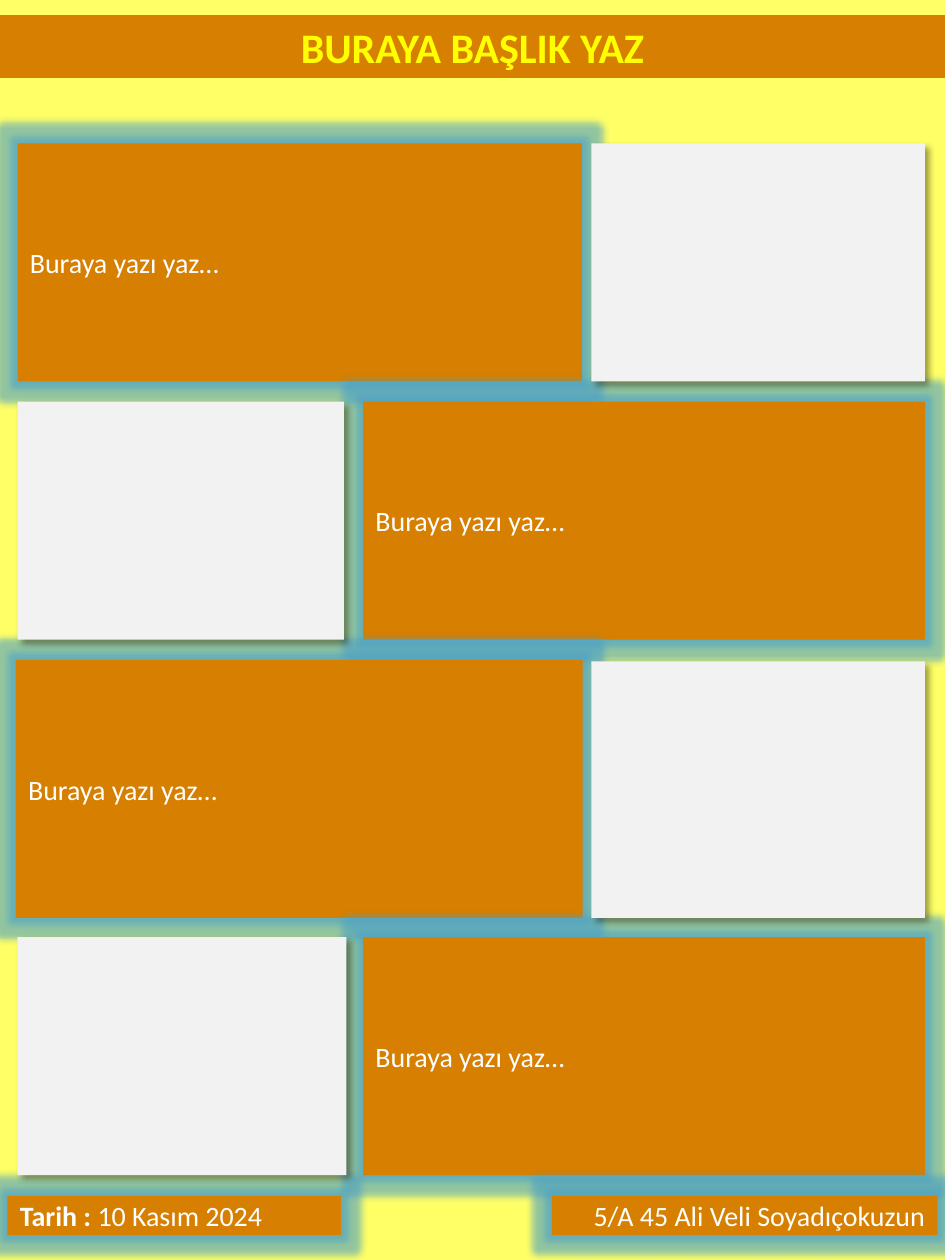
"""Build a one-page class poster with alternating text and picture areas."""
from dataclasses import dataclass

import pptx
import pptx.dml.color
import pptx.enum.shapes
import pptx.enum.text
import pptx.oxml
import pptx.oxml.ns
import pptx.util

Pt = pptx.util.Pt
ALIGN = pptx.enum.text.PP_ALIGN
ANCHOR = pptx.enum.text.MSO_ANCHOR

ORANGE = "D67F00"
PALE_GREY = "F2F2F2"
WHITE = "FFFFFF"
YELLOW = "FFFF00"
GLOW = (
    '<a:glow rad="101600"><a:srgbClr val="4BA0C6">'
    '<a:alpha val="60000"/></a:srgbClr></a:glow>'
)
SHADOW = (
    '<a:outerShdw blurRad="50800" dist="38100" dir="2700000" algn="tl" rotWithShape="0">'
    '<a:srgbClr val="000000"><a:alpha val="40000"/></a:srgbClr></a:outerShdw>'
)


@dataclass(frozen=True)
class Box:
    left: float
    top: float
    width: float
    height: float


@dataclass(frozen=True)
class Panel:
    box: Box
    runs: tuple[tuple[str, bool], ...]
    align: ALIGN = ALIGN.LEFT


PROMPT = (("Buraya yazı yaz…", False),)
PANELS = (
    Panel(Box(10, 82, 322.5, 136), PROMPT),
    Panel(Box(207.5, 229.5, 321, 136), PROMPT),
    Panel(Box(9, 377, 324, 147.5), PROMPT),
    Panel(Box(207.5, 535.5, 321, 136), PROMPT),
    Panel(Box(4.3, 683.3, 190.5, 22.3), (("Tarih : ", True), ("10 Kasım 2024", False))),
    Panel(Box(315.4, 683.3, 220.3, 22.3),
          (("5/A 45 Ali Veli Soyadıçokuzun", False),), ALIGN.RIGHT),
)
PICTURE_AREAS = (
    Box(338, 82, 190.5, 136),
    Box(10, 229.5, 186.5, 136),
    Box(338, 378, 190.5, 146.5),
    Box(10, 535.5, 188, 136),
)


def rgb(value: str) -> pptx.dml.color.RGBColor:
    """Turn a hex string into a colour."""
    return pptx.dml.color.RGBColor.from_string(value)


def paint(fill, color: str) -> None:
    """Apply a solid fill."""
    fill.solid()
    fill.fore_color.rgb = rgb(color)


def style_font(font, size: float, color: str) -> None:
    """Set the poster typeface, size and colour."""
    font.name = "Calibri"
    font.size = Pt(size)
    font.color.rgb = rgb(color)


def add_area(slide, box: Box, color: str, effect: str):
    """Draw a borderless rectangle with one effect."""
    area = slide.shapes.add_shape(
        pptx.enum.shapes.MSO_SHAPE.RECTANGLE,
        Pt(box.left), Pt(box.top), Pt(box.width), Pt(box.height),
    )
    paint(area.fill, color)
    area.line.fill.background()
    area.shadow.inherit = False
    effects = area.element.spPr.find(pptx.oxml.ns.qn("a:effectLst"))
    namespace = pptx.oxml.ns.nsdecls("a")
    wrapper = pptx.oxml.parse_xml(f"<a:effectLst {namespace}>{effect}</a:effectLst>")
    effects.append(wrapper[0])
    return area


def add_panel(slide, panel: Panel) -> None:
    """Draw a glowing panel with its line of text."""
    frame = add_area(slide, panel.box, ORANGE, GLOW).text_frame
    frame.word_wrap = True
    frame.vertical_anchor = ANCHOR.MIDDLE
    paragraph = frame.paragraphs[0]
    paragraph.alignment = panel.align
    style_font(paragraph.font, 16, WHITE)
    for text, bold in panel.runs:
        run = paragraph.add_run()
        run.text = text
        run.font.bold = bold


def set_heading(heading, text: str) -> None:
    """Turn the title placeholder into the top banner."""
    heading.left, heading.top, heading.width, heading.height = (
        Pt(0), Pt(8.6), Pt(540), Pt(36))
    paint(heading.fill, ORANGE)
    heading.text = text
    frame = heading.text_frame
    frame.auto_size = pptx.enum.text.MSO_AUTO_SIZE.NONE
    frame.vertical_anchor = ANCHOR.TOP
    paragraph = frame.paragraphs[0]
    paragraph.alignment = ALIGN.CENTER
    style_font(paragraph.font, 24, YELLOW)
    paragraph.font.bold = True


def main() -> None:
    """Assemble and save the poster."""
    deck = pptx.Presentation()
    deck.slide_width, deck.slide_height = Pt(540), Pt(720)
    poster = deck.slides.add_slide(deck.slide_layouts.get_by_name("Title Only"))
    paint(poster.background.fill, "FFFF66")
    set_heading(poster.shapes.title, "BURAYA BAŞLIK YAZ")
    for panel in PANELS:
        add_panel(poster, panel)
    for box in PICTURE_AREAS:
        add_area(poster, box, PALE_GREY, SHADOW)
    deck.save("out.pptx")


if __name__ == "__main__":
    main()
